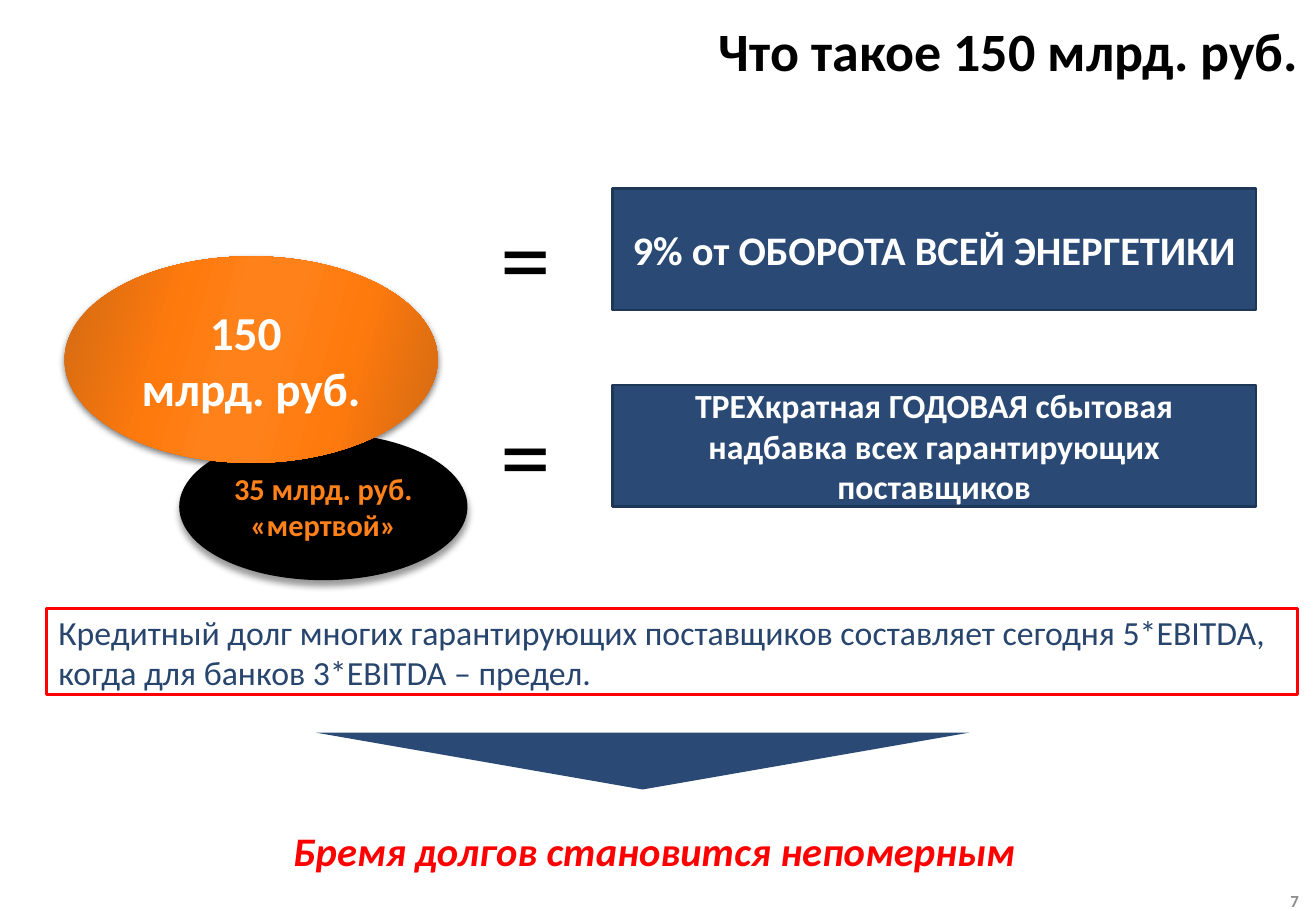
from lxml import etree
from pptx import Presentation
from pptx.dml.color import RGBColor
from pptx.enum.shapes import MSO_SHAPE
from pptx.enum.text import MSO_ANCHOR, PP_ALIGN
from pptx.oxml import parse_xml
from pptx.oxml.ns import qn
from pptx.util import Cm, Pt

LEFT, CENTER, RIGHT = PP_ALIGN.LEFT, PP_ALIGN.CENTER, PP_ALIGN.RIGHT
TOP, MIDDLE = MSO_ANCHOR.TOP, MSO_ANCHOR.MIDDLE
OVAL, RECTANGLE, DOWN_ARROW = MSO_SHAPE.OVAL, MSO_SHAPE.RECTANGLE, MSO_SHAPE.DOWN_ARROW

BLACK = RGBColor(0x00, 0x00, 0x00)
WHITE = RGBColor(0xFF, 0xFF, 0xFF)
RED = RGBColor(0xFF, 0x00, 0x00)
GRAY = RGBColor(0x8C, 0x8C, 0x8C)
NAVY = RGBColor(0x2A, 0x4A, 0x75)
NAVY_EDGE = RGBColor(0x1F, 0x37, 0x57)
NAVY_TEXT = RGBColor(0x28, 0x45, 0x6E)
ORANGE = RGBColor(0xFF, 0x81, 0x19)
ORANGE_DEEP = RGBColor(0xFF, 0x7A, 0x0D)
ORANGE_DARK = RGBColor(0xD1, 0x6A, 0x14)
ORANGE_STOPS = [(0, ORANGE_DARK), (30, ORANGE_DEEP), (45, ORANGE),
                (55, ORANGE), (73, ORANGE_DEEP), (100, ORANGE_DARK)]
DRAWING = "http://schemas.openxmlformats.org/drawingml/2006/main"

deck = Presentation()
deck.slide_width, deck.slide_height = Cm(27.51), Cm(19.05)
page = deck.slides.add_slide(deck.slide_layouts[6])


def add_box(kind, place, fill=None, edge=None, edge_width=1.5):
    area = [Cm(length) for length in place]
    if kind is None:
        return page.shapes.add_textbox(*area)
    box = page.shapes.add_shape(kind, *area)
    box.shadow.inherit = False
    if fill is not None:
        box.fill.solid()
        box.fill.fore_color.rgb = fill
    if edge is None:
        box.line.fill.background()
    else:
        box.line.color.rgb = edge
        box.line.width = Pt(edge_width)
    return box


def write(box, text, size, color, bold=True, align=CENTER, anchor=MIDDLE, inset=None):
    frame = box.text_frame
    frame.word_wrap = True
    frame.vertical_anchor = anchor
    if inset is not None:
        frame.margin_left = frame.margin_right = Cm(inset)
        frame.margin_top = frame.margin_bottom = Cm(inset)
    frame.text = text
    for para in frame.paragraphs:
        para.alignment = align
        for span in para.runs:
            span.font.name = "Calibri"
            span.font.size = Pt(size)
            span.font.bold = bold
            span.font.color.rgb = color


title = add_box(None, (11.76, 0.53, 15.39, 2.79))
write(title, "Что такое 150 млрд. руб.", 32, BLACK, align=RIGHT, anchor=TOP, inset=0)
title.text_frame.paragraphs[0].line_spacing = 0.9

page_number = add_box(None, (26.26, 18.64, 0.89, 0.41))
write(page_number, "7", 10, GRAY, align=RIGHT, inset=0)

dead_debt = add_box(OVAL, (3.76, 9.07, 6, 3.05), BLACK, BLACK, 0.75)
write(dead_debt, "35 млрд. руб. «мертвой»", 18, ORANGE, inset=0)

total_debt = add_box(OVAL, (1.35, 5.36, 7.8, 4.32))
write(total_debt, "150 \nмлрд. руб.", 28, WHITE)
stops = "".join(f'<a:gs pos="{place * 1000}"><a:srgbClr val="{color}"/></a:gs>'
                for place, color in ORANGE_STOPS)
gradient = parse_xml(f'<a:gradFill xmlns:a="{DRAWING}" rotWithShape="1"><a:gsLst>{stops}</a:gsLst>'
                     '<a:lin ang="960000" scaled="0"/></a:gradFill>')
total_debt._element.spPr.find(qn("a:prstGeom")).addnext(gradient)

for oval, opacity, distance in [(dead_debt, 40, 3.4), (total_debt, 50, 2)]:
    effects = oval._element.spPr.find(qn("a:effectLst"))
    shadow = etree.SubElement(effects, qn("a:outerShdw"), blurRad=str(Pt(4)),
                              dist=str(Pt(distance)), dir="5400000", rotWithShape="0")
    shade = etree.SubElement(shadow, qn("a:srgbClr"), val=str(BLACK))
    etree.SubElement(shade, qn("a:alpha"), val=str(opacity * 1000))

EQUIVALENTS = [
    (3.94, "9% от ОБОРОТА ВСЕЙ ЭНЕРГЕТИКИ", 24),
    (8.05, "ТРЕХкратная ГОДОВАЯ сбытовая надбавка всех гарантирующих поставщиков", 20),
]
for top, text, size in EQUIVALENTS:
    equals = add_box(None, (9.17, top, 3.63, 2.54))
    write(equals, "=", 60, BLACK, bold=False, anchor=TOP)
    equivalent = add_box(RECTANGLE, (12.8, top, 13.46, 2.54), NAVY, NAVY_EDGE)
    write(equivalent, text, size, WHITE)

credit = add_box(RECTANGLE, (0.97, 12.73, 26.16, 1.8), WHITE, RED)
write(credit, "Кредитный долг многих гарантирующих поставщиков составляет сегодня 5*EBITDA, "
      "когда для банков 3*EBITDA – предел.", 20, NAVY_TEXT, bold=False, align=LEFT)

arrow = add_box(DOWN_ARROW, (6.6, 15.32, 13.67, 1.19), NAVY)
arrow.adjustments[0] = 0.81
arrow.adjustments[1] = 1

conclusion = add_box(None, (1.09, 17.15, 25.17, 1.27))
write(conclusion, "Бремя долгов становится непомерным", 24, RED, anchor=TOP)
conclusion.text_frame.paragraphs[0].runs[0].font.italic = True

deck.save("out.pptx")
